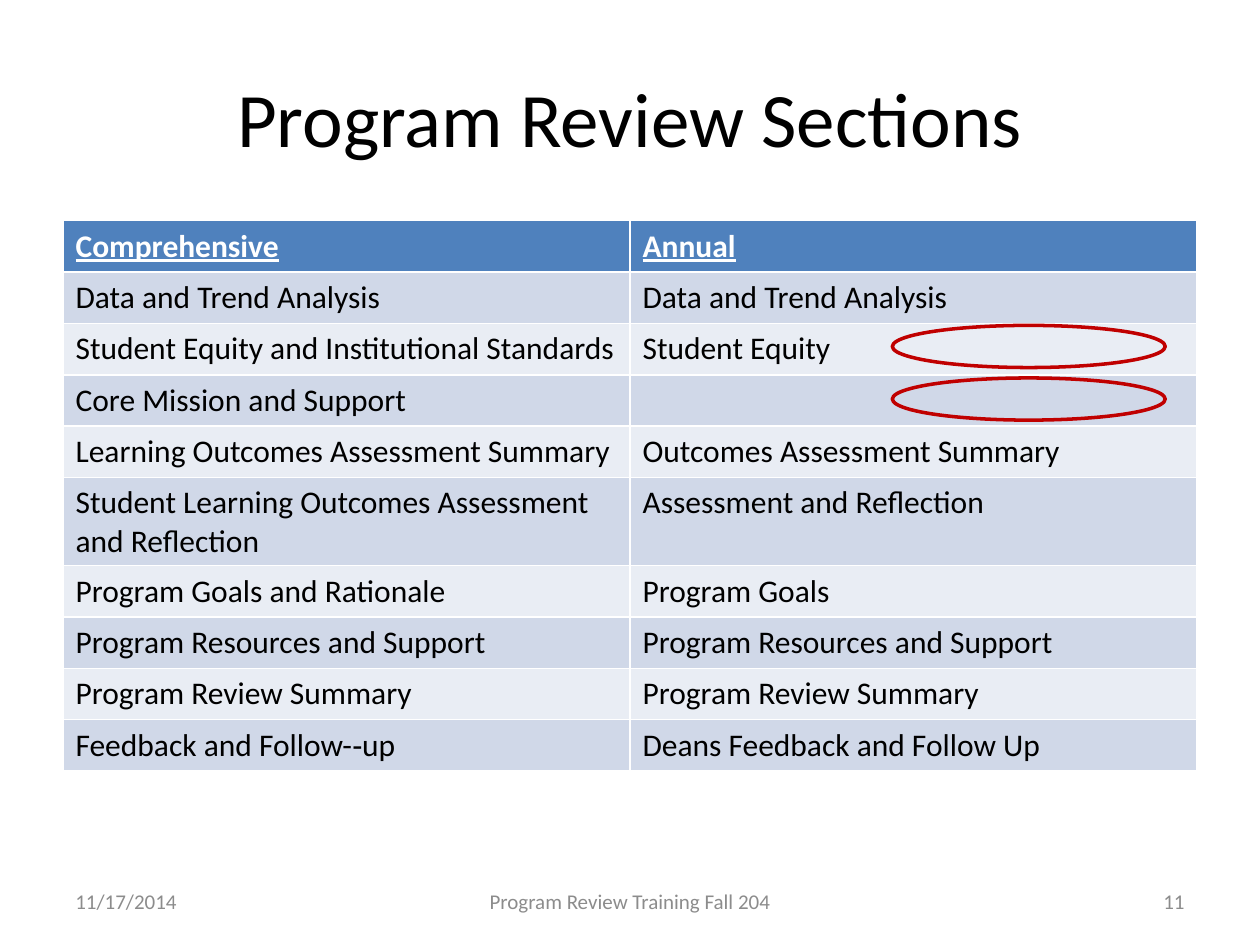
from dataclasses import dataclass

import pptx
import pptx.dml.color
import pptx.enum.shapes
import pptx.enum.text
import pptx.util

Cm = pptx.util.Cm
Pt = pptx.util.Pt
ALIGN = pptx.enum.text.PP_ALIGN
MIDDLE = pptx.enum.text.MSO_ANCHOR.MIDDLE


def color(value):
    return pptx.dml.color.RGBColor.from_string(value)


@dataclass(frozen=True)
class Theme:
    font: str = "Calibri"
    title_size: float = 44
    table_size: float = 18
    footer_size: float = 12
    text: str = "000000"
    header_text: str = "FFFFFF"
    footer_text: str = "8C8C8C"
    header_fill: str = "4F81BD"
    band_fills: tuple = ("D0D8E8", "E9EDF4")
    highlight: str = "C00000"


THEME = Theme()

SECTIONS = [
    ("Comprehensive", "Annual"),
    ("Data and Trend Analysis", "Data and Trend Analysis"),
    ("Student Equity and Institutional Standards", "Student Equity"),
    ("Core Mission and Support", ""),
    ("Learning Outcomes Assessment Summary", "Outcomes Assessment Summary"),
    ("Student Learning Outcomes Assessment and Reflection", "Assessment and Reflection"),
    ("Program Goals and Rationale", "Program Goals"),
    ("Program Resources and Support", "Program Resources and Support"),
    ("Program Review Summary", "Program Review Summary"),
    ("Feedback and Follow-‐up", "Deans Feedback and Follow Up"),
]


def format_text(text_frame, size, text_color, alignment=ALIGN.LEFT, header=False):
    for paragraph in text_frame.paragraphs:
        paragraph.alignment = alignment
        for run in paragraph.runs:
            run.font.name = THEME.font
            run.font.size = Pt(size)
            run.font.color.rgb = color(text_color)
            run.font.bold = header
            run.font.underline = header


def add_title(slide, text, left, top, width, height):
    title = slide.shapes.title
    title.left, title.top, title.width, title.height = left, top, width, height
    title.text_frame.text = text
    title.text_frame.vertical_anchor = MIDDLE
    format_text(title.text_frame, THEME.title_size, THEME.text, ALIGN.CENTER)


def add_sections_table(slide, rows, left, top, width, height):
    table = slide.shapes.add_table(len(rows), len(rows[0]), left, top, width, height).table
    for row_index, row in enumerate(rows):
        header = row_index == 0
        fill = THEME.header_fill if header else THEME.band_fills[(row_index - 1) % 2]
        text_color = THEME.header_text if header else THEME.text
        for column_index, text in enumerate(row):
            cell = table.cell(row_index, column_index)
            cell.fill.solid()
            cell.fill.fore_color.rgb = color(fill)
            cell.text_frame.text = text
            format_text(cell.text_frame, THEME.table_size, text_color, header=header)


def add_highlights(slide, count, left, top, width, height, pitch):
    """Ring the end of consecutive table rows, one ellipse per row."""
    for index in range(count):
        ellipse = slide.shapes.add_shape(
            pptx.enum.shapes.MSO_SHAPE.OVAL, left, top + index * pitch, width, height)
        ellipse.shadow.inherit = False
        ellipse.fill.background()
        ellipse.line.color.rgb = color(THEME.highlight)
        ellipse.line.width = Pt(2)


def add_footer(slide, date, caption, number, left, top, width, height):
    side_width, caption_width = Cm(5.93), Cm(8.04)
    parts = [
        (date, left, side_width, ALIGN.LEFT),
        (caption, left + (width - caption_width) // 2, caption_width, ALIGN.CENTER),
        (number, left + width - side_width, side_width, ALIGN.RIGHT),
    ]
    for text, part_left, part_width, alignment in parts:
        text_frame = slide.shapes.add_textbox(part_left, top, part_width, height).text_frame
        text_frame.word_wrap = True
        text_frame.vertical_anchor = MIDDLE
        text_frame.text = text
        format_text(text_frame, THEME.footer_size, THEME.footer_text, alignment)


def main():
    presentation = pptx.Presentation()
    presentation.slide_width, presentation.slide_height = Cm(25.4), Cm(19.05)
    slide = presentation.slides.add_slide(presentation.slide_layouts.get_by_name("Title Only"))
    left, width = Cm(1.27), Cm(22.86)
    add_title(slide, "Program Review Sections", left, Cm(0.76), width, Cm(3.18))
    add_footer(slide, "11/17/2014", "Program Review Training Fall 204", "11",
               left, Cm(17.65), width, Cm(1.02))
    add_sections_table(slide, SECTIONS, left, Cm(4.45), width, Cm(10.35))
    add_highlights(slide, 2, Cm(17.99), Cm(6.56), Cm(5.5), Cm(0.85), pitch=Cm(1.06))
    presentation.save("out.pptx")


if __name__ == "__main__":
    main()
